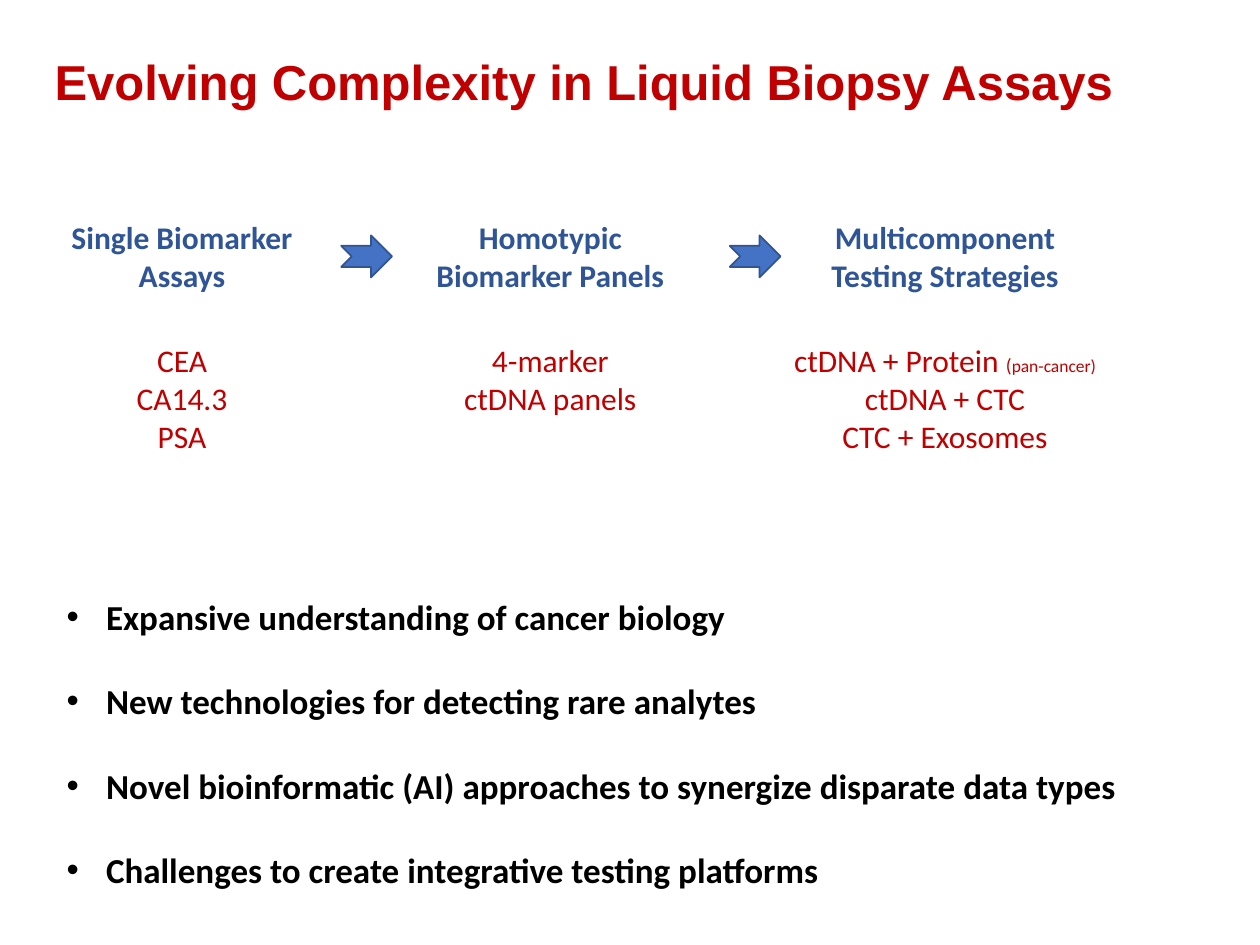
from dataclasses import dataclass

from lxml.etree import SubElement
from pptx import Presentation
from pptx.dml.color import RGBColor
from pptx.enum.shapes import MSO_SHAPE
from pptx.enum.text import MSO_ANCHOR, PP_ALIGN
from pptx.oxml.ns import qn
from pptx.slide import Slide
from pptx.text.text import TextFrame, _Paragraph
from pptx.util import Pt


@dataclass(frozen=True)
class Theme:
    red: RGBColor = RGBColor(0xC0, 0x00, 0x00)
    blue: RGBColor = RGBColor(0x2F, 0x55, 0x97)
    black: RGBColor = RGBColor(0, 0, 0)
    fill: RGBColor = RGBColor(0x44, 0x72, 0xC4)
    edge: RGBColor = RGBColor(0x32, 0x54, 0x91)
    face: str = "Calibri"
    title_face: str = "Arial"
    title: int = 28
    point: int = 20
    label: int = 18
    paren: int = 11
    note: int = 10


@dataclass(frozen=True)
class Stage:
    mid: float
    head: str
    items: tuple[str, ...]
    width: float
    note: str = ""


THEME = Theme()
STAGES = (
    Stage(104, "Single Biomarker Assays", ("CEA", "CA14.3", "PSA"), 82),
    Stage(314.5, "Homotypic Biomarker Panels", ("4-marker", "ctDNA panels"), 130),
    Stage(540, "Multicomponent Testing Strategies",
          ("ctDNA + Protein ", "ctDNA + CTC", "CTC + Exosomes"), 210, "pan-cancer)"),
)
ARROWS = (195, 417)
POINTS = (
    "Expansive understanding of cancer biology",
    "New technologies for detecting rare analytes",
    "Novel bioinformatic (AI) approaches to synergize disparate data types",
    "Challenges to create integrative testing platforms",
)
HEAD_TOP, HEAD_WIDTH = 121, 145.5
ITEM_TOP = 191.5
INDENT = 22.5


def style(para: _Paragraph, size: int, color: RGBColor, bold: bool = False,
          face: str = THEME.face) -> None:
    font = para.font
    font.name, font.size, font.bold = face, Pt(size), bold
    font.color.rgb = color


def add_box(slide: Slide, left: float, top: float, width: float, height: float) -> TextFrame:
    box = slide.shapes.add_textbox(Pt(left), Pt(top), Pt(width), Pt(height))
    box.text_frame.word_wrap = True
    return box.text_frame


def add_title(slide: Slide, text: str) -> None:
    title = slide.shapes.title
    title.left, title.top, title.width, title.height = Pt(24), Pt(26), Pt(680), Pt(41)
    frame = title.text_frame
    frame.text = text
    frame.vertical_anchor = MSO_ANCHOR.MIDDLE
    para = frame.paragraphs[0]
    para.alignment = PP_ALIGN.LEFT
    style(para, THEME.title, THEME.red, True, THEME.title_face)


def add_stage(slide: Slide, stage: Stage) -> None:
    head = add_box(slide, stage.mid - HEAD_WIDTH / 2, HEAD_TOP, HEAD_WIDTH, 51)
    head.text = stage.head
    head.paragraphs[0].alignment = PP_ALIGN.CENTER
    style(head.paragraphs[0], THEME.label, THEME.blue, True)

    body = add_box(slide, stage.mid - stage.width / 2, ITEM_TOP, stage.width,
                   7.5 + 21.75 * len(stage.items))
    body.text = "\n".join(stage.items)
    for para in body.paragraphs:
        para.alignment = PP_ALIGN.CENTER
        style(para, THEME.label, THEME.red)
    if stage.note:
        for text, size in (("(", THEME.paren), (stage.note, THEME.note)):
            run = body.paragraphs[0].add_run()
            run.text = text
            run.font.size = Pt(size)


def add_arrow(slide: Slide, left: float) -> None:
    arrow = slide.shapes.add_shape(MSO_SHAPE.NOTCHED_RIGHT_ARROW,
                                   Pt(left), Pt(134.5), Pt(29), Pt(24))
    arrow.shadow.inherit = False
    arrow.fill.solid()
    arrow.fill.fore_color.rgb = THEME.fill
    arrow.line.color.rgb = THEME.edge
    arrow.line.width = Pt(1)


def add_bullet(para: _Paragraph) -> None:
    props = para._p.get_or_add_pPr()
    props.set("marL", str(Pt(INDENT)))
    props.set("indent", str(-Pt(INDENT)))
    SubElement(props, qn("a:buFont"), typeface="Arial")
    SubElement(props, qn("a:buChar"), char="•")


def add_points(slide: Slide) -> None:
    frame = add_box(slide, 31, 337, 653, 177)
    frame.text = "\n".join(POINTS)
    for i, para in enumerate(frame.paragraphs):
        add_bullet(para)
        if i:
            para.space_before = Pt(24)
        style(para, THEME.point, THEME.black, True)


def main() -> None:
    deck = Presentation()
    deck.slide_width, deck.slide_height = Pt(720), Pt(540)
    slide = deck.slides.add_slide(deck.slide_layouts[5])
    add_title(slide, "Evolving Complexity in Liquid Biopsy Assays")
    for stage in STAGES:
        add_stage(slide, stage)
    for left in ARROWS:
        add_arrow(slide, left)
    add_points(slide)
    deck.save("out.pptx")


if __name__ == "__main__":
    main()
